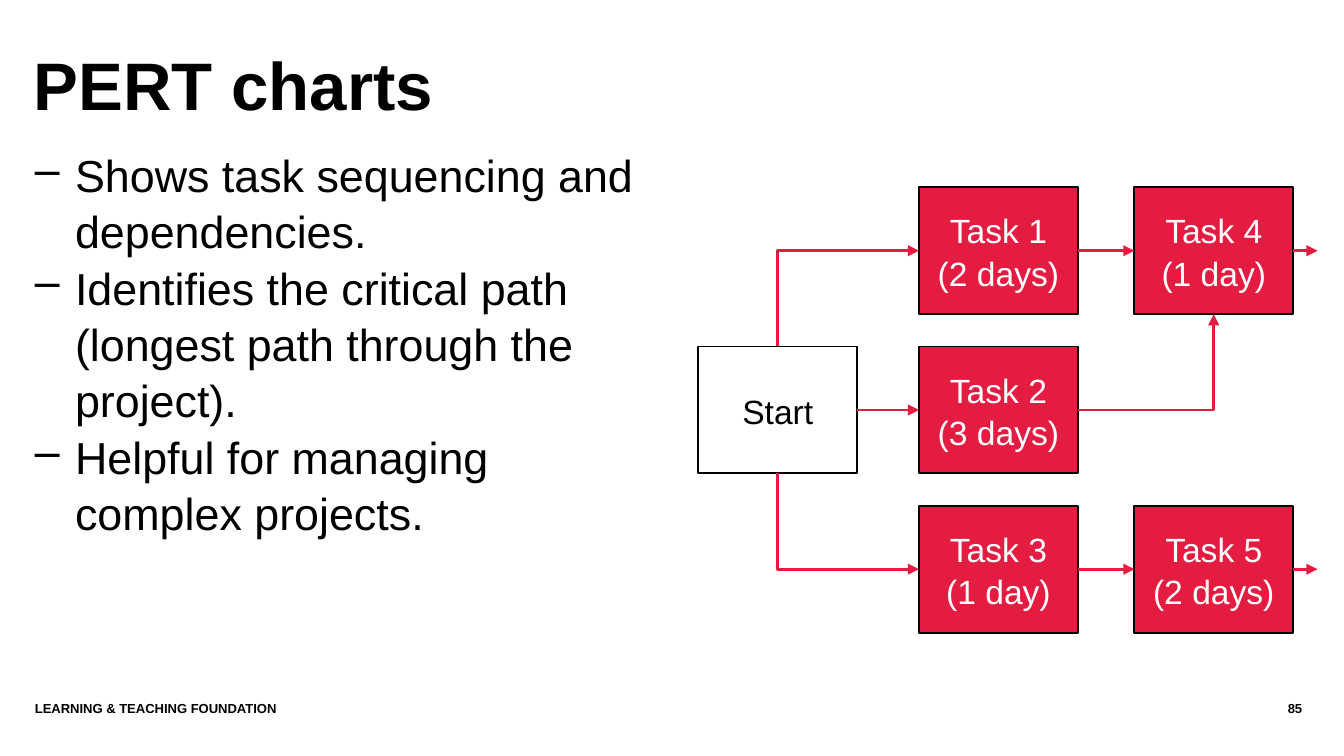
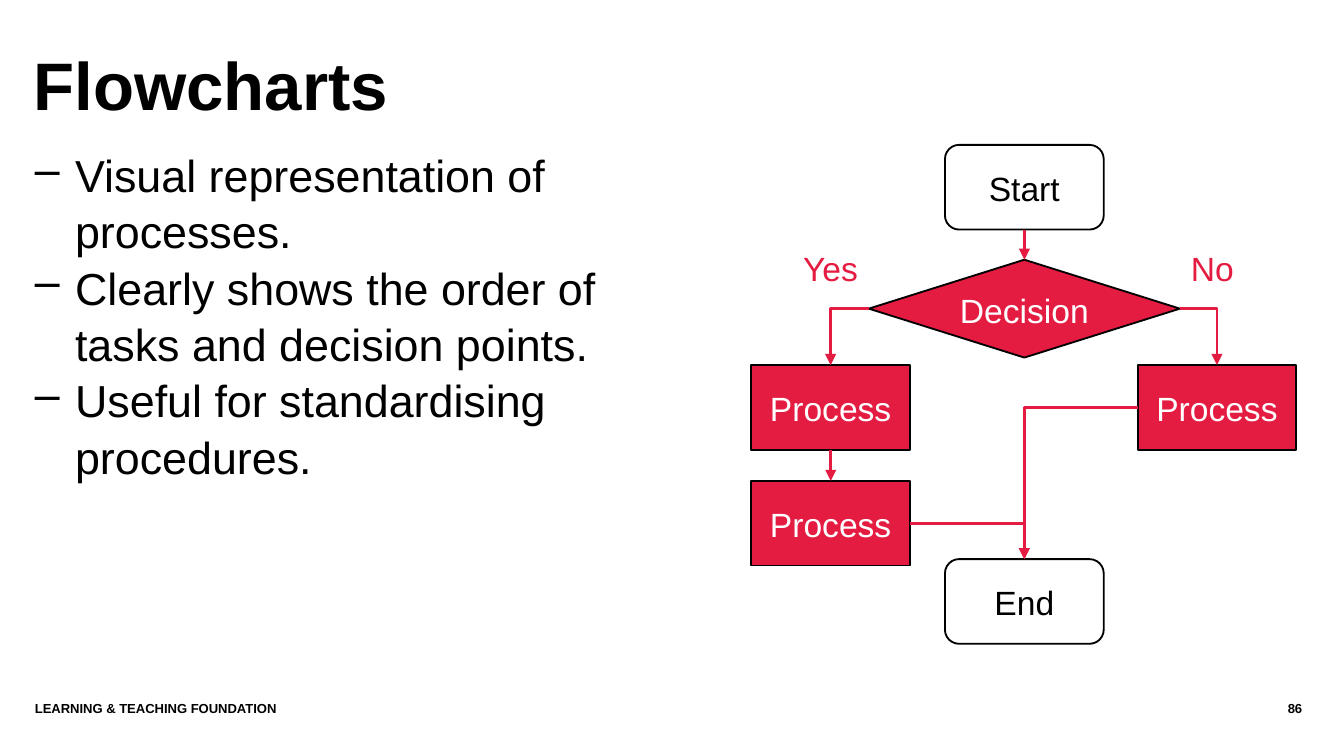
from dataclasses import dataclass
from typing import Optional

from lxml import etree
from pptx import Presentation
from pptx.dml.color import RGBColor
from pptx.enum.shapes import MSO_CONNECTOR, MSO_SHAPE
from pptx.enum.text import MSO_ANCHOR, PP_ALIGN
from pptx.oxml.ns import qn
from pptx.util import Cm, Pt

RECT = MSO_SHAPE.RECTANGLE
ROUND = MSO_SHAPE.ROUNDED_RECTANGLE
CHOICE = MSO_SHAPE.FLOWCHART_DECISION
STRAIGHT = MSO_CONNECTOR.STRAIGHT
ELBOW = MSO_CONNECTOR.ELBOW
LEFT, CENTER, RIGHT = PP_ALIGN.LEFT, PP_ALIGN.CENTER, PP_ALIGN.RIGHT
MIDDLE = MSO_ANCHOR.MIDDLE
TOP, WEST, BOTTOM, EAST = range(4)

COLORS = {"red": "E51C41", "black": "000000", "white": "FFFFFF"}
FONT = "Arial"
SPACING = 1.05
INDENT = Cm(0.76)
EDGE = Cm(24.9)
FOOTER = "LEARNING & TEACHING FOUNDATION"


@dataclass(frozen=True)
class Box:
    key: str
    lines: tuple[str, ...]
    x: float
    y: float
    width: float
    height: float
    form: int = RECT
    fill: Optional[str] = "red"
    ink: str = "white"


@dataclass(frozen=True)
class Link:
    start: str
    out: int
    end: Optional[str] = None
    into: int = WEST
    bent: bool = False


@dataclass(frozen=True)
class Page:
    title: str
    points: tuple[str, ...]
    number: int
    boxes: tuple[Box, ...]
    links: tuple[Link, ...]


def color(name: str) -> RGBColor:
    return RGBColor.from_string(COLORS[name])


def write(para, text: str, size: float, ink: str = "black",
          bold: bool = False, align=LEFT) -> None:
    para.alignment = align
    para.line_spacing = SPACING
    run = para.add_run()
    run.text = text
    run.font.name = FONT
    run.font.size = Pt(size)
    run.font.bold = bold
    run.font.color.rgb = color(ink)


def paras(frame, count: int) -> list:
    return [frame.paragraphs[0]] + [frame.add_paragraph() for _ in range(count - 1)]


def add_frame(slide, x: float, y: float, width: float, height: float):
    frame = slide.shapes.add_textbox(Cm(x), Cm(y), Cm(width), Cm(height)).text_frame
    frame.word_wrap = True
    frame.margin_left = frame.margin_right = 0
    frame.margin_top = frame.margin_bottom = 0
    return frame


def add_points(slide, points: tuple[str, ...]) -> None:
    frame = add_frame(slide, 0.66, 2.74, 11.46, 10)
    for para, text in zip(paras(frame, len(points)), points):
        para.level = 1
        write(para, text, 24)
        props = para._p.get_or_add_pPr()
        props.set("marL", str(INDENT))
        props.set("indent", str(-INDENT))
        etree.SubElement(props, qn("a:buChar")).set("char", "–")


def add_box(slide, box: Box):
    shape = slide.shapes.add_shape(
        box.form, Cm(box.x), Cm(box.y), Cm(box.width), Cm(box.height))
    shape.shadow.inherit = False
    if box.fill:
        shape.fill.solid()
        shape.fill.fore_color.rgb = color(box.fill)
        shape.line.color.rgb = color("black")
        shape.line.width = Pt(1)
    else:
        shape.fill.background()
        shape.line.fill.background()
    frame = shape.text_frame
    frame.word_wrap = True
    frame.vertical_anchor = MIDDLE
    for para, text in zip(paras(frame, len(box.lines)), box.lines):
        write(para, text, 18, box.ink, align=CENTER)
    return shape


def bend(line, upright: bool) -> None:
    props = line._element.spPr
    props.find(qn("a:prstGeom")).set("prst", "bentConnector2")
    if not upright:
        return
    wide, high = line.end_x - line.begin_x, line.end_y - line.begin_y
    mid_x, mid_y = line.begin_x + wide // 2, line.begin_y + high // 2
    line.begin_x, line.begin_y = mid_x - high // 2, mid_y + wide // 2
    line.end_x, line.end_y = mid_x + high // 2, mid_y - wide // 2
    props.find(qn("a:xfrm")).set("rot", "5400000")


def add_link(slide, link: Link, shapes: dict) -> None:
    line = slide.shapes.add_connector(ELBOW if link.bent else STRAIGHT, 0, 0, 0, 0)
    line.begin_connect(shapes[link.start], link.out)
    if link.end:
        line.end_connect(shapes[link.end], link.into)
    else:
        line.end_x, line.end_y = EDGE, line.begin_y
    if link.bent:
        bend(line, link.out in (TOP, BOTTOM))
    line.line.color.rgb = color("red")
    line.line.width = Pt(1.5)
    etree.SubElement(line.line._get_or_add_ln(), qn("a:tailEnd")).set("type", "triangle")
    etree.SubElement(line._element.spPr, qn("a:effectLst"))


def add_page(deck, page: Page) -> None:
    slide = deck.slides.add_slide(deck.slide_layouts[6])
    title = add_frame(slide, 0.64, 0.74, 23.44, 1.93)
    write(title.paragraphs[0], page.title, 36, bold=True)
    add_points(slide, page.points)
    shapes = {box.key: add_box(slide, box) for box in page.boxes}
    for link in page.links:
        add_link(slide, link, shapes)
    footer = add_frame(slide, 0.66, 13.23, 21.36, 0.76)
    write(footer.paragraphs[0], FOOTER, 7, bold=True)
    number = add_frame(slide, 22.1, 13.23, 2.51, 0.76)
    write(number.paragraphs[0], str(page.number), 7, bold=True, align=RIGHT)


def task(number: int, days: str, col: int, row: int) -> Box:
    return Box(f"task{number}", (f"Task {number}", f"({days})"),
               17.37 + 4.07 * col, 3.54 + 3.01 * row, 3, 2.4)


def step(key: str, x: float, y: float) -> Box:
    return Box(key, ("Process",), x, y, 3, 1.6)


def stop(key: str, text: str, y: float) -> Box:
    return Box(key, (text,), 17.86, y, 3, 1.6, ROUND, "white", "black")


def label(text: str, x: float) -> Box:
    return Box(text, (text,), x, 4.47, 1.83, 1.14, ROUND, None, "red")


PAGES = (
    Page(
        "PERT charts",
        ("Shows task sequencing and dependencies.",
         "Identifies the critical path (longest path through the project).",
         "Helpful for managing complex projects."),
        85,
        (Box("start", ("Start",), 13.2, 6.55, 3, 2.4, RECT, "white", "black"),
         task(1, "2 days", 0, 0), task(4, "1 day", 1, 0),
         task(2, "3 days", 0, 1),
         task(3, "1 day", 0, 2), task(5, "2 days", 1, 2)),
        (Link("start", EAST, "task2"),
         Link("start", TOP, "task1", bent=True),
         Link("start", BOTTOM, "task3", bent=True),
         Link("task2", EAST, "task4", BOTTOM, True),
         Link("task1", EAST, "task4"),
         Link("task3", EAST, "task5"),
         Link("task4", EAST),
         Link("task5", EAST)),
    ),
    Page(
        "Flowcharts",
        ("Visual representation of processes.",
         "Clearly shows the order of tasks and decision points.",
         "Useful for standardising procedures."),
        86,
        (stop("start", "Start", 2.74),
         stop("end", "End", 10.57),
         Box("choice", ("Decision",), 16.42, 4.91, 5.88, 1.85, CHOICE),
         step("first", 14.2, 6.9), step("second", 14.2, 9.09),
         step("other", 21.5, 6.9),
         label("Yes", 14.78), label("No", 22)),
        (Link("start", BOTTOM, "choice", TOP),
         Link("choice", EAST, "other", TOP, True),
         Link("choice", WEST, "first", TOP, True),
         Link("first", BOTTOM, "second", TOP),
         Link("second", EAST, "end", TOP, True),
         Link("other", WEST, "end", TOP, True)),
    ),
)


def main() -> None:
    deck = Presentation()
    deck.slide_width, deck.slide_height = Cm(25.4), Cm(14.29)
    for page in PAGES:
        add_page(deck, page)
    deck.save("out.pptx")


if __name__ == "__main__":
    main()
